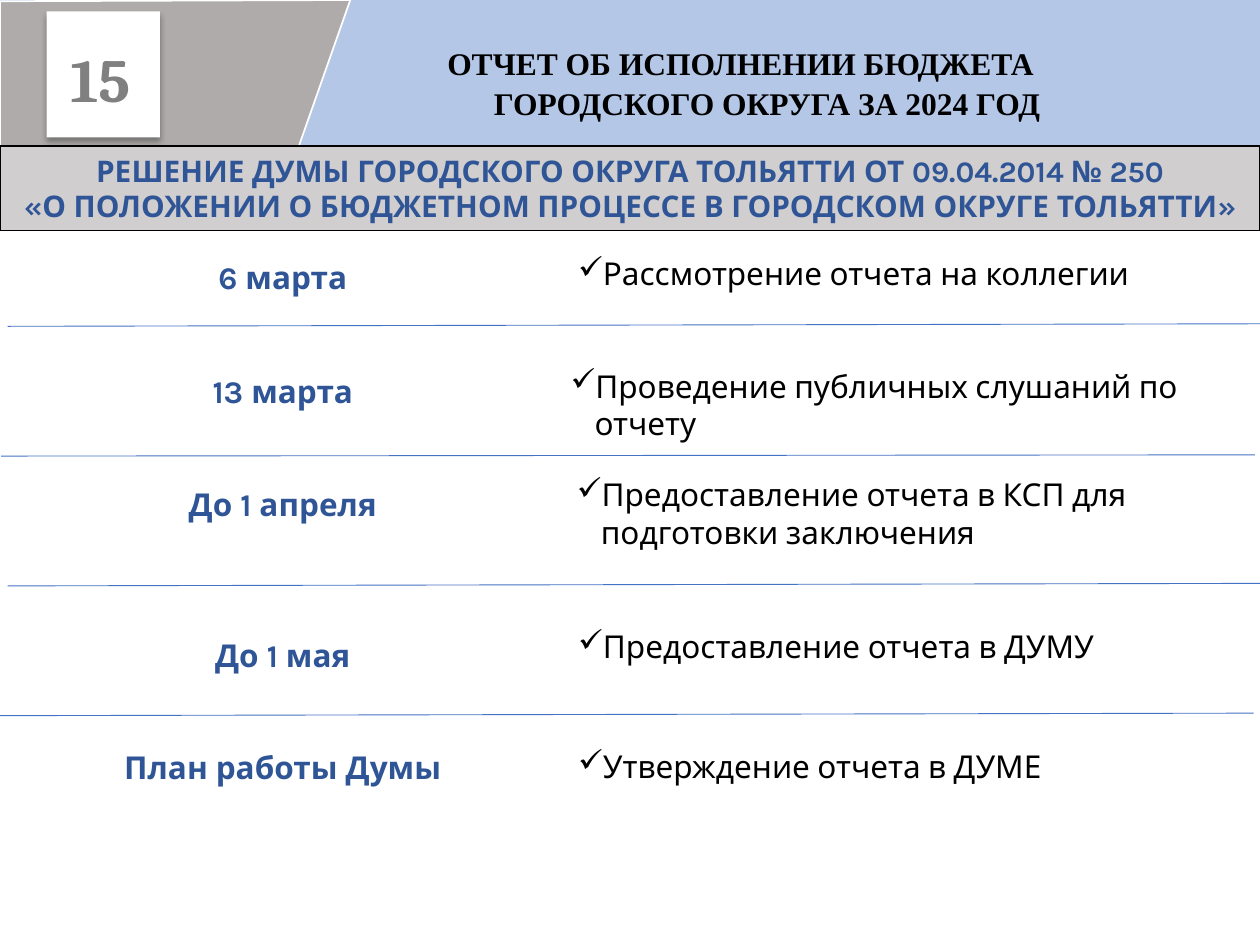
from dataclasses import dataclass

import pptx
import pptx.dml.color
import pptx.enum.shapes
import pptx.enum.text
import pptx.oxml
import pptx.oxml.ns
import pptx.util
from pptx.dml.color import RGBColor
from pptx.util import Inches

BLACK = RGBColor(0x00, 0x00, 0x00)
WHITE = RGBColor(0xFF, 0xFF, 0xFF)
GRAY = RGBColor(0x80, 0x80, 0x80)
CORNER_GRAY = RGBColor(0xAF, 0xAB, 0xAB)
BANNER_GRAY = RGBColor(0xD0, 0xCE, 0xCE)
HEADER_BLUE = RGBColor(0xB4, 0xC7, 0xE7)
DARK_BLUE = RGBColor(0x2F, 0x55, 0x97)
LINE_BLUE = RGBColor(0x44, 0x72, 0xC4)

ALIGN = pptx.enum.text.PP_ALIGN
ANCHOR = pptx.enum.text.MSO_ANCHOR
RECTANGLE = pptx.enum.shapes.MSO_SHAPE.RECTANGLE
STRAIGHT = pptx.enum.shapes.MSO_CONNECTOR.STRAIGHT
NAMESPACE = pptx.oxml.ns.nsdecls("a")


@dataclass
class Stage:
    date: str
    date_top: float
    action: str
    action_left: float
    action_top: float
    action_height: float = 0.4


@dataclass
class Divider:
    left: float
    start_y: float
    right: float
    end_y: float


STAGES = [
    Stage("6 марта", 2.0, "Рассмотрение отчета на коллегии", 4.49, 1.97),
    Stage("13 марта", 2.9, "Проведение публичных слушаний по отчету", 4.43, 2.86, 0.71),
    Stage("До 1 апреля", 3.8, "Предоставление отчета в КСП для подготовки заключения",
          4.48, 3.72, 0.71),
    Stage("До 1 мая", 5.0, "Предоставление отчета в ДУМУ", 4.49, 4.93),
    Stage("План работы Думы", 5.89, "Утверждение отчета в ДУМЕ", 4.49, 5.88),
]
DIVIDERS = [
    Divider(0.06, 2.59, 10, 2.57),
    Divider(0.01, 3.62, 9.96, 3.61),
    Divider(0.06, 4.65, 10, 4.63),
    Divider(0, 5.68, 9.95, 5.66),
]


def write_text(shape, text: str, font: str, size: float, color: RGBColor,
               bold: bool = False, alignment=ALIGN.LEFT) -> None:
    frame = shape.text_frame
    frame.text = text
    frame.word_wrap = True
    for paragraph in frame.paragraphs:
        paragraph.alignment = alignment
        for run in paragraph.runs:
            run.font.name = font
            run.font.size = pptx.util.Pt(size)
            run.font.bold = bold
            run.font.color.rgb = color


def add_text(slide, left: float, top: float, width: float, height: float, *style, **options):
    box = slide.shapes.add_textbox(Inches(left), Inches(top), Inches(width), Inches(height))
    write_text(box, *style, **options)
    return box


def add_rectangle(slide, left: float, top: float, width: float, height: float, fill: RGBColor):
    shape = slide.shapes.add_shape(
        RECTANGLE, Inches(left), Inches(top), Inches(width), Inches(height))
    shape.shadow.inherit = False
    shape.fill.solid()
    shape.fill.fore_color.rgb = fill
    shape.line.fill.background()
    return shape


def add_title(slide) -> None:
    title = slide.shapes.title
    title.left, title.top = Inches(0), Inches(0)
    title.width, title.height = Inches(10), Inches(1.23)
    title.fill.solid()
    title.fill.fore_color.rgb = HEADER_BLUE
    write_text(title, "ОТЧЕТ ОБ ИСПОЛНЕНИИ БЮДЖЕТА\nГОРОДСКОГО ОКРУГА ЗА 2024 ГОД",
               "Times New Roman", 18, BLACK, bold=True)
    frame = title.text_frame
    frame.auto_size = pptx.enum.text.MSO_AUTO_SIZE.NONE
    frame.vertical_anchor = ANCHOR.MIDDLE
    frame.margin_left = frame.margin_bottom = 0
    frame.margin_top = Inches(0.07)
    for paragraph, indent in zip(frame.paragraphs, (3.55, 3.92)):
        paragraph.line_spacing = pptx.util.Pt(23)
        paragraph.space_before = pptx.util.Pt(0)
        paragraph._p.get_or_add_pPr().set("marL", str(Inches(indent)))


def add_corner(slide) -> None:
    builder = slide.shapes.build_freeform(0, Inches(1.45))
    corners = [(0, 0.01), (2.78, 0), (2.27, 1.45)]
    builder.add_line_segments([(Inches(x), Inches(y)) for x, y in corners], close=True)
    corner = builder.convert_to_shape()
    corner.shadow.inherit = False
    corner.fill.solid()
    corner.fill.fore_color.rgb = CORNER_GRAY
    corner.line.color.rgb = WHITE
    corner.line.width = pptx.util.Pt(1)


def add_banner(slide) -> None:
    banner = add_rectangle(slide, 0, 1.16, 10, 0.67, BANNER_GRAY)
    banner.line.color.rgb = BLACK
    banner.line.width = pptx.util.Pt(0.75)
    write_text(banner, "РЕШЕНИЕ ДУМЫ ГОРОДСКОГО ОКРУГА ТОЛЬЯТТИ ОТ 09.04.2014 № 250\n"
               "«О ПОЛОЖЕНИИ О БЮДЖЕТНОМ ПРОЦЕССЕ В ГОРОДСКОМ ОКРУГЕ ТОЛЬЯТТИ»",
               "Karla", 17, DARK_BLUE, bold=True, alignment=ALIGN.CENTER)
    banner.text_frame.vertical_anchor = ANCHOR.TOP


def add_number_card(slide) -> None:
    card = add_rectangle(slide, 0.37, 0.09, 0.9, 1, WHITE)
    effects = card._element.spPr.find(pptx.oxml.ns.qn("a:effectLst"))
    effects.append(pptx.oxml.parse_xml(
        f'<a:outerShdw {NAMESPACE} blurRad="{pptx.util.Pt(3.5)}" dist="{pptx.util.Pt(2.2)}" '
        'dir="5400000" rotWithShape="0"><a:srgbClr val="000000"><a:alpha val="32000"/>'
        '</a:srgbClr></a:outerShdw>'))
    add_text(slide, 0.46, 0.28, 0.8, 0.69, "15", "Cambria", 35, GRAY, bold=True)


def add_stage(slide, stage: Stage) -> None:
    add_text(slide, 0.08, stage.date_top, 4.33, 0.4, stage.date, "Karla", 18, DARK_BLUE,
             bold=True, alignment=ALIGN.CENTER)
    action = add_text(slide, stage.action_left, stage.action_top, 5.55, stage.action_height,
                      stage.action, "Karla", 18, BLACK)
    properties = action.text_frame.paragraphs[0]._p.get_or_add_pPr()
    properties.set("marL", str(Inches(0.19)))
    properties.set("indent", str(-Inches(0.19)))
    properties.append(pptx.oxml.parse_xml(f'<a:buChar {NAMESPACE} char="✓"/>'))


def add_divider(slide, divider: Divider) -> None:
    line = slide.shapes.add_connector(
        STRAIGHT, Inches(divider.left), Inches(divider.start_y),
        Inches(divider.right), Inches(divider.end_y))
    line.line.color.rgb = LINE_BLUE
    line.line.width = pptx.util.Pt(0.5)
    line._element.spPr.append(pptx.oxml.parse_xml(f"<a:effectLst {NAMESPACE}/>"))


def main() -> None:
    presentation = pptx.Presentation()
    presentation.slide_width = Inches(10)
    presentation.slide_height = Inches(7.5)
    slide = presentation.slides.add_slide(presentation.slide_layouts[5])
    add_title(slide)
    add_corner(slide)
    add_banner(slide)
    add_number_card(slide)
    for stage in STAGES:
        add_stage(slide, stage)
    for divider in DIVIDERS:
        add_divider(slide, divider)
    presentation.save("out.pptx")


if __name__ == "__main__":
    main()
